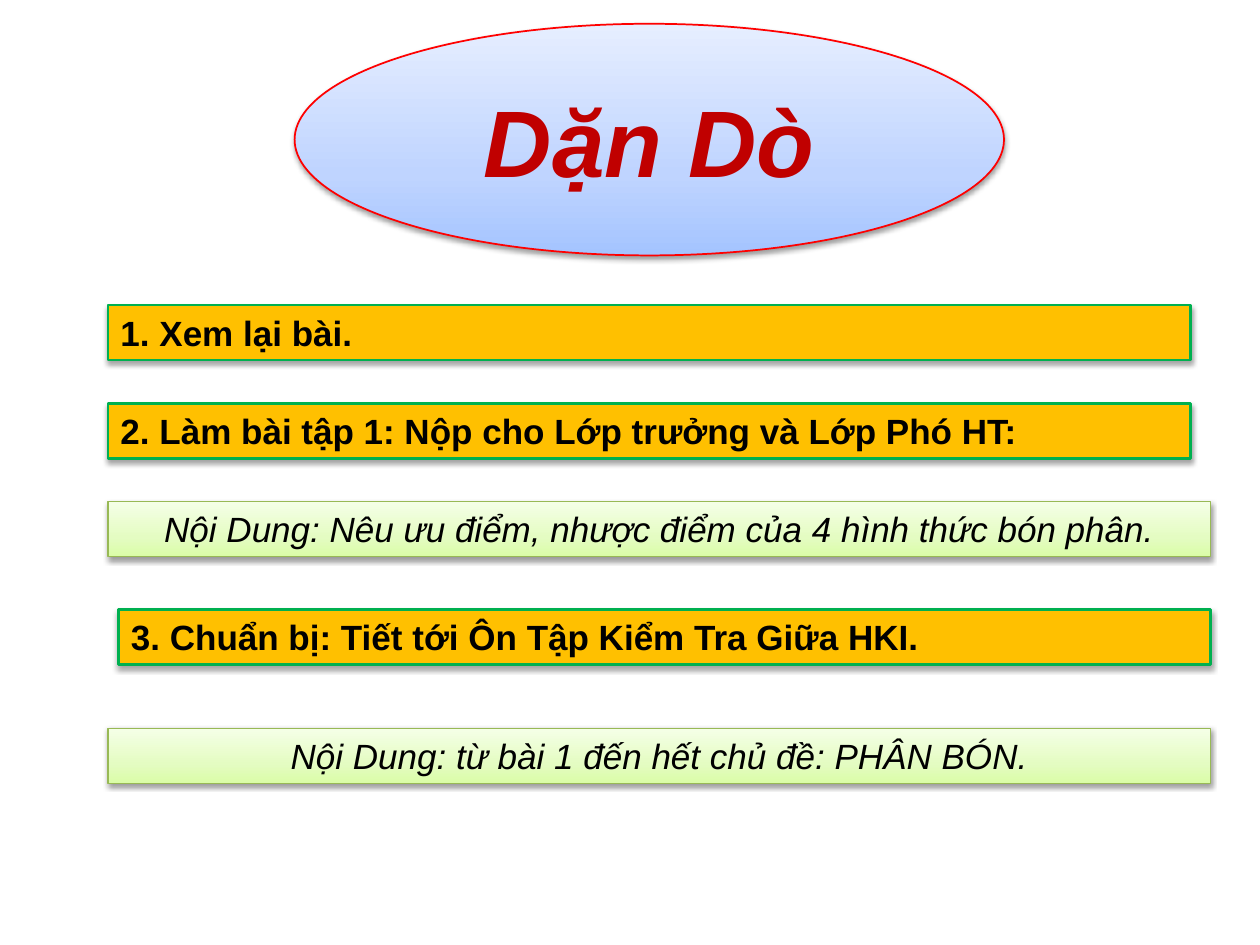
"""Build the "Dặn Dò" homework reminder slide."""
from lxml.etree import SubElement
from pptx import Presentation
from pptx.dml.color import RGBColor
from pptx.enum.shapes import MSO_SHAPE
from pptx.enum.text import MSO_ANCHOR, MSO_AUTO_SIZE, PP_ALIGN
from pptx.oxml.ns import qn
from pptx.util import Cm, Pt

TITLE = "Dặn Dò"
TITLE_BOX = (5.94, 0.48, 14.3, 4.67)
BAR_HEIGHT = 1.11
BARS = [
    ("task", "1. Xem lại bài.", 2.18, 6.15, 21.82),
    ("task", "2. Làm bài tập 1: Nộp cho Lớp trưởng và Lớp Phó HT:", 2.18, 8.13, 21.82),
    ("detail", "Nội Dung: Nêu ưu điểm, nhược điểm của 4 hình thức bón phân.", 2.18, 10.11, 22.23),
    ("task", "3. Chuẩn bị: Tiết tới Ôn Tập Kiểm Tra Giữa HKI.", 2.39, 12.29, 22.02),
    ("detail", "Nội Dung: từ bài 1 đến hết chủ đề: PHÂN BÓN.", 2.18, 14.68, 22.23),
]
THEME = {
    "font": "Arial",
    "title": {"fill": ("A4C4FF", "BFD4FF", "E6EEFF"), "line": "FF0000", "width": 1,
              "shadow": (38, 1.6), "size": 54, "color": "C00000", "bold": True,
              "italic": True, "align": PP_ALIGN.CENTER},
    "task": {"fill": ("FFC000",), "line": "00B050", "width": 1.5,
             "shadow": (35, 1.8), "size": 20, "color": "000000", "bold": True,
             "italic": False, "align": PP_ALIGN.LEFT},
    "detail": {"fill": ("DAFDA7", "E4FCC2", "F5FFE7"), "line": "98B955", "width": 0.75,
               "shadow": (38, 1.6), "size": 20, "color": "000000", "bold": False,
               "italic": True, "align": PP_ALIGN.CENTER},
}
STOPS = (0, 35, 100)
SHADOW_BLUR = 3.1


def fill_shape(sp, colors):
    if len(colors) == 1:
        sp.fill.solid()
        sp.fill.fore_color.rgb = RGBColor.from_string(colors[0])
        return
    sp.fill.gradient()
    sp.fill.gradient_angle = 90
    stops = sp._element.spPr.find(".//" + qn("a:gsLst"))
    for old in list(stops):
        stops.remove(old)
    for pos, color in zip(STOPS, colors):
        gs = SubElement(stops, qn("a:gs"), pos=str(pos * 1000))
        SubElement(gs, qn("a:srgbClr"), val=color)


def add_shadow(sp, alpha, dist):
    sp.shadow.inherit = False
    effects = sp._element.spPr.find(qn("a:effectLst"))
    shadow = SubElement(effects, qn("a:outerShdw"), blurRad=str(Pt(SHADOW_BLUR)),
                        dist=str(Pt(dist)), dir="5400000", rotWithShape="0")
    color = SubElement(shadow, qn("a:srgbClr"), val="000000")
    SubElement(color, qn("a:alpha"), val=str(alpha * 1000))


def add_panel(s, kind, box, style):
    sp = s.shapes.add_shape(kind, *map(Cm, box))
    fill_shape(sp, style["fill"])
    sp.line.color.rgb = RGBColor.from_string(style["line"])
    sp.line.width = Pt(style["width"])
    add_shadow(sp, *style["shadow"])
    return sp


def write_text(tf, text, style):
    p = tf.paragraphs[0]
    p.alignment = style["align"]
    r = p.add_run()
    r.text = text
    r.font.name = THEME["font"]
    r.font.size = Pt(style["size"])
    r.font.bold = style["bold"]
    r.font.italic = style["italic"]
    r.font.color.rgb = RGBColor.from_string(style["color"])


def main():
    prs = Presentation()
    prs.slide_width, prs.slide_height = Cm(25.4), Cm(19.05)
    s = prs.slides.add_slide(prs.slide_layouts[5])

    oval = add_panel(s, MSO_SHAPE.OVAL, TITLE_BOX, THEME["title"])
    title = s.shapes.title
    title.left, title.top, title.width, title.height = map(Cm, TITLE_BOX)
    title.text_frame.vertical_anchor = MSO_ANCHOR.MIDDLE
    write_text(title.text_frame, TITLE, THEME["title"])
    oval._element.addnext(title._element)

    for kind, text, left, top, width in BARS:
        sp = add_panel(s, MSO_SHAPE.RECTANGLE, (left, top, width, BAR_HEIGHT), THEME[kind])
        tf = sp.text_frame
        tf.word_wrap = True
        tf.auto_size = MSO_AUTO_SIZE.SHAPE_TO_FIT_TEXT
        tf.vertical_anchor = MSO_ANCHOR.TOP
        write_text(tf, text, THEME[kind])

    prs.save("out.pptx")


if __name__ == "__main__":
    main()
